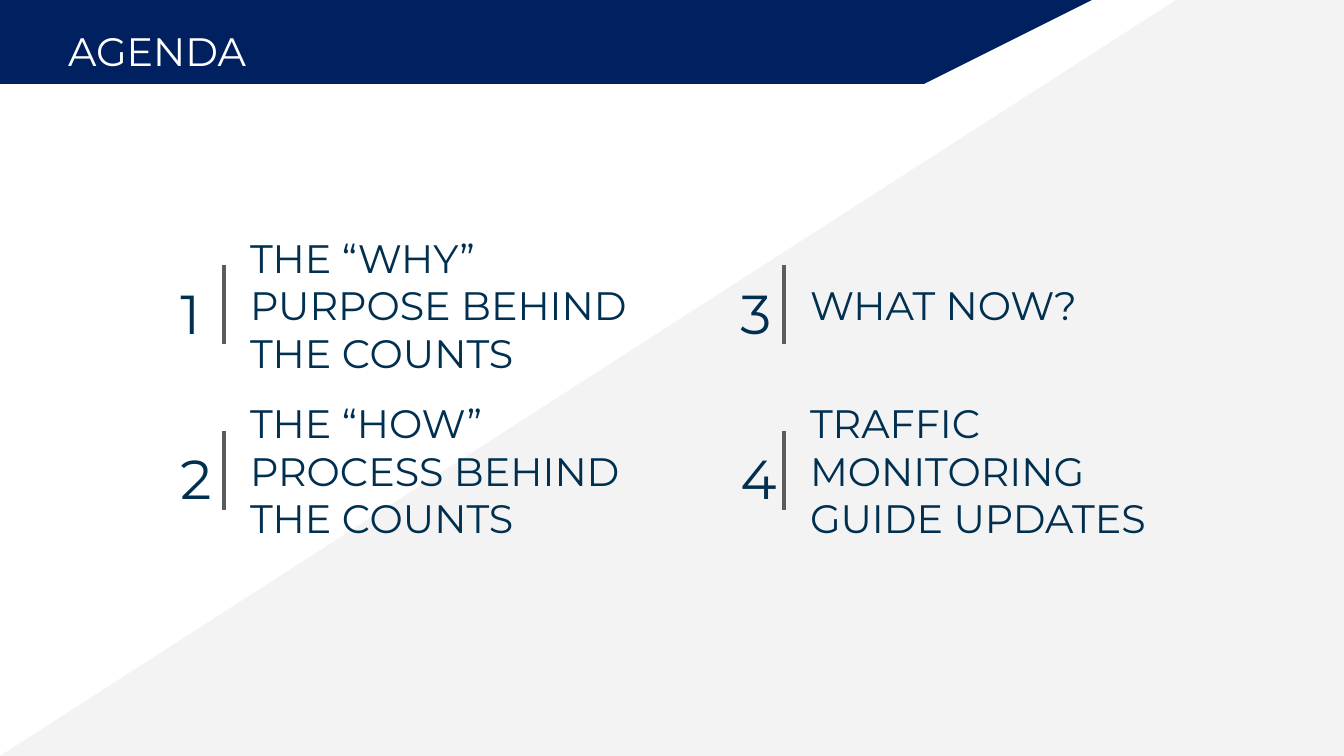
from lxml import etree
from pptx import Presentation
from pptx import util as u
from pptx.dml.color import RGBColor
from pptx.enum import shapes, text
from pptx.oxml.ns import qn

W, H = 16, 9
FONT = "Montserrat"
COLORS = {"navy": "002060", "ink": "002F50", "rule": "5C5C5C",
          "wedge": "D9D9D9", "white": "FFFFFF"}

# Agenda grid: x of the rules, y of the row centres
COLS = [W / 6, W * 7 / 12]
ROWS = [3.63, 5.6]
RULE_H = 0.94
ITEM_H = 1.79
AGENDA = [
    ["THE “WHY”\nPURPOSE BEHIND THE COUNTS", "THE “HOW”\nPROCESS BEHIND THE COUNTS"],
    ["WHAT NOW?", "TRAFFIC MONITORING GUIDE UPDATES"],
]
ITEM_W = [5.6, 4.23]


def rgb(name):
    return RGBColor.from_string(COLORS[name])


def add_area(s, points, color, opacity=None):
    """Filled polygon without outline."""
    fb = s.shapes.build_freeform(*points[0], scale=u.Inches(1))
    fb.add_line_segments(points[1:], close=True)
    sp = fb.convert_to_shape()
    sp.shadow.inherit = False
    sp.line.fill.background()
    sp.fill.solid()
    sp.fill.fore_color.rgb = rgb(color)
    if opacity is not None:
        clr = sp.element.spPr.find(".//" + qn("a:srgbClr"))
        etree.SubElement(clr, qn("a:alpha"), val=str(opacity * 1000))


def add_rule(s, x, y):
    """Vertical rule centred on y."""
    top, bottom = y - RULE_H / 2, y + RULE_H / 2
    ln = s.shapes.add_connector(shapes.MSO_CONNECTOR.STRAIGHT, u.Inches(x),
                                u.Inches(top), u.Inches(x), u.Inches(bottom))
    ln.line.color.rgb = rgb("rule")
    ln.line.width = u.Pt(4)
    etree.SubElement(ln.element.spPr, qn("a:effectLst"))


def format_text(sp, content, size, color, inset, anchor):
    tf = sp.text_frame
    tf.text = content
    frame = {"word_wrap": True, "auto_size": text.MSO_AUTO_SIZE.NONE,
             "vertical_anchor": anchor,
             "margin_left": u.Inches(inset), "margin_right": u.Inches(inset),
             "margin_top": u.Inches(inset / 2), "margin_bottom": u.Inches(inset / 2)}
    for name, value in frame.items():
        setattr(tf, name, value)
    for p in tf.paragraphs:
        p.alignment = text.PP_ALIGN.LEFT
        for r in p.runs:
            for name, value in {"name": FONT, "size": u.Pt(size)}.items():
                setattr(r.font, name, value)
            r.font.color.rgb = rgb(color)


def add_text(s, box, content, size, anchor):
    sp = s.shapes.add_textbox(*map(u.Inches, box))
    format_text(sp, content, size, "ink", 0.07, anchor)
    return sp


def add_item(s, x, y, width, number, content):
    """Number, rule and label of one agenda point."""
    add_rule(s, x, y)
    sp = add_text(s, (x - 0.59, y - 0.34, 0.35, 0.86), str(number), 47,
                  text.MSO_ANCHOR.TOP)
    sp.text_frame.paragraphs[0].runs[0].font._element.set("spc", "70")
    add_text(s, (x + 0.24, y - ITEM_H / 2, width, ITEM_H), content, 34,
             text.MSO_ANCHOR.MIDDLE)


def add_title(s, content):
    sp = s.shapes.title
    box = {"left": 0.67, "top": 0, "width": 14.67, "height": 1.2}
    for name, value in box.items():
        setattr(sp, name, u.Inches(value))
    format_text(sp, content, 34, "white", 0.14, text.MSO_ANCHOR.MIDDLE)
    # Bring the title in front of the band
    sp.element.getparent().append(sp.element)


def main():
    prs = Presentation()
    prs.slide_width, prs.slide_height = u.Inches(W), u.Inches(H)
    s = prs.slides.add_slide(prs.slide_layouts[5])

    # Title band and diagonal background
    add_area(s, [(0, 0), (12.93, 0), (12.93, 0.16), (11.37, 1.2), (0, 1.2)], "navy")
    add_area(s, [(0, H), (13.6, 0), (W, 0), (W, H)], "wedge", opacity=30)

    # Agenda points, numbered down each column
    for c, column in enumerate(AGENDA):
        for r, content in enumerate(column):
            number = c * len(ROWS) + r + 1
            add_item(s, COLS[c], ROWS[r], ITEM_W[c], number, content)

    add_title(s, "AGENDA")
    prs.save("out.pptx")


if __name__ == "__main__":
    main()
